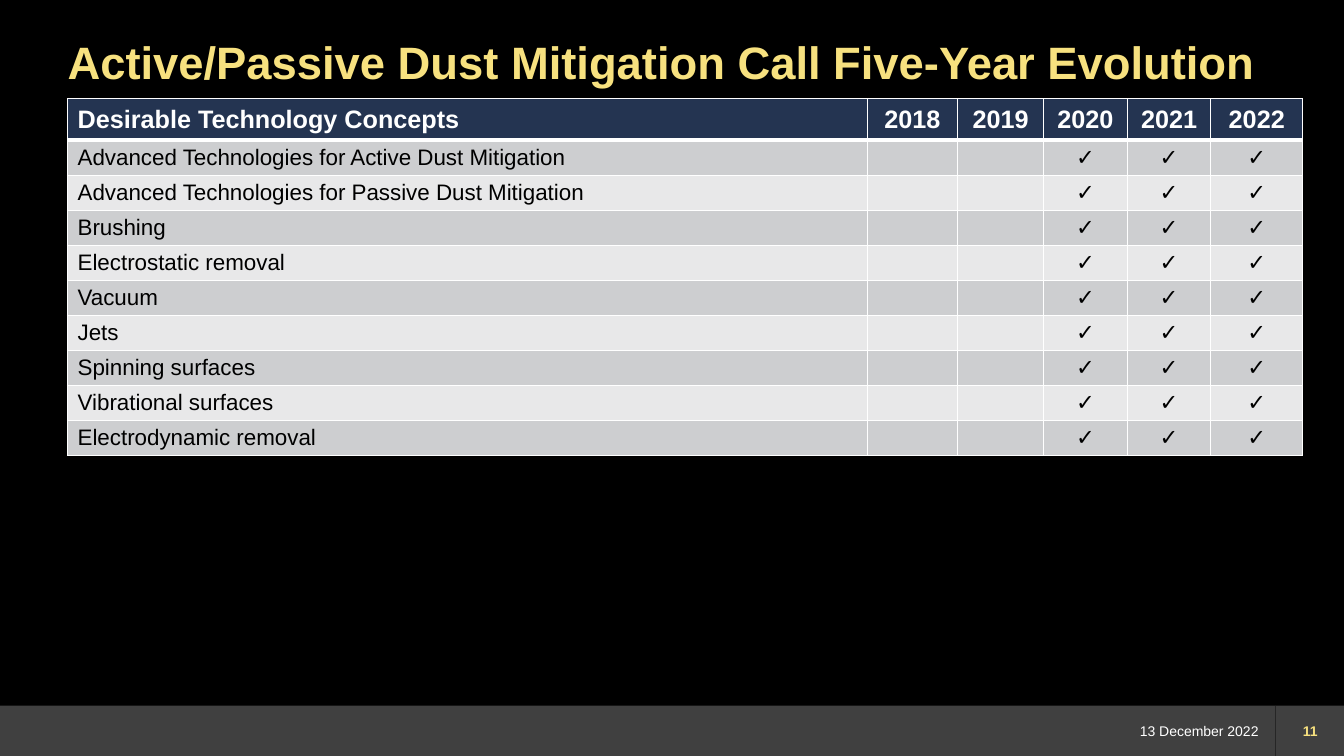
import pptx
import pptx.util
import pptx.dml.color
import pptx.enum.shapes
import pptx.enum.text
import lxml.etree
from pptx.oxml.ns import qn

Inches, Pt = pptx.util.Inches, pptx.util.Pt
ALIGN = pptx.enum.text.PP_ALIGN
ANCHOR = pptx.enum.text.MSO_ANCHOR

TITLE = "Active/Passive Dust Mitigation Call Five-Year Evolution"
DATE, PAGE = "13 December 2022", "11"
HEADER = ["Desirable Technology Concepts", "2018", "2019", "2020", "2021", "2022"]
CONCEPTS = [
    "Advanced Technologies for Active Dust Mitigation",
    "Advanced Technologies for Passive Dust Mitigation",
    "Brushing",
    "Electrostatic removal",
    "Vacuum",
    "Jets",
    "Spinning surfaces",
    "Vibrational surfaces",
    "Electrodynamic removal",
]
FIRST_YEAR = "2020"  # every concept is ticked from this year on
COL_WIDTHS = [7.93, 0.9, 0.85, 0.83, 0.83, 0.91]
HEADER_HEIGHT, BODY_HEIGHT = 0.41, 3.13
SLIDE_W, SLIDE_H, FOOTER_H = 13.33, 7.5, 0.5
FOOTER_TOP = SLIDE_H - FOOTER_H
LEFT, TABLE_TOP, DIVIDER_X = 0.67, 0.98, 12.65


class Theme:
    font = "Arial"
    background, footer, divider = "000000", "404040", "262626"
    accent, light, dark = "F7E17F", "FFFFFF", "000000"
    header, bands = "243451", ("CDCED0", "E8E8E9")
    title_size, header_size, body_size, footer_size = 32.4, 18, 16, 10
    rule, header_rule = 1, 3


def rgb(value):
    return pptx.dml.color.RGBColor.from_string(value)


def write(tf, text, size, color, bold=False, align=ALIGN.LEFT):
    p = tf.paragraphs[0]
    p.text = text
    p.alignment = align
    p.font.name, p.font.size, p.font.bold = Theme.font, Pt(size), bold
    p.font.color.rgb = rgb(color)
    return p


def set_border(cell, top, bottom):
    """Draw the four cell edges; the widths of top and bottom are in points."""
    props = cell._tc.get_or_add_tcPr()
    widths = {"a:lnL": Theme.rule, "a:lnR": Theme.rule, "a:lnT": top, "a:lnB": bottom}
    for i, (tag, width) in enumerate(widths.items()):
        ln = lxml.etree.Element(qn(tag), w=str(Pt(width)))
        fill = lxml.etree.SubElement(ln, qn("a:solidFill"))
        lxml.etree.SubElement(fill, qn("a:srgbClr"), val=Theme.light)
        props.insert(i, ln)


def add_title(slide):
    title = slide.shapes.title
    title.left, title.top, title.width, title.height = map(Inches, (LEFT, 0.4, 12, 0.83))
    tf = title.text_frame
    tf.margin_left = tf.margin_right = tf.margin_top = tf.margin_bottom = 0
    tf.vertical_anchor = ANCHOR.TOP
    tf.auto_size = pptx.enum.text.MSO_AUTO_SIZE.NONE
    tf.word_wrap = True
    write(tf, TITLE, Theme.title_size, Theme.accent, True).line_spacing = 0.9


def add_footer_text(slide, text, left, width, margin, color, bold, align):
    tf = slide.shapes.add_textbox(*map(Inches, (left, FOOTER_TOP, width, FOOTER_H))).text_frame
    tf.margin_left = tf.margin_right = Inches(margin)
    tf.margin_top = tf.margin_bottom = 0
    tf.vertical_anchor = ANCHOR.MIDDLE
    tf.word_wrap = True
    write(tf, text, Theme.footer_size, color, bold, align)


def add_footer(slide):
    bar = slide.shapes.add_shape(pptx.enum.shapes.MSO_SHAPE.RECTANGLE,
                                 *map(Inches, (0, FOOTER_TOP, SLIDE_W, FOOTER_H)))
    bar.shadow.inherit = False
    bar.fill.solid()
    bar.fill.fore_color.rgb = rgb(Theme.footer)
    bar.line.fill.background()
    divider = slide.shapes.add_connector(pptx.enum.shapes.MSO_CONNECTOR.STRAIGHT,
                                         *map(Inches, (DIVIDER_X, FOOTER_TOP, DIVIDER_X, SLIDE_H)))
    divider.line.color.rgb = rgb(Theme.divider)
    divider.line.width = Pt(Theme.rule)
    lxml.etree.SubElement(divider._element.spPr, qn("a:effectLst"))
    add_footer_text(slide, DATE, 11.08, 1.5, 0.1, Theme.light, False, ALIGN.RIGHT)
    add_footer_text(slide, PAGE, 12.73, 0.53, 0, Theme.accent, True, ALIGN.CENTER)


def add_concept_table(slide):
    ticks = ["✓" if year >= FIRST_YEAR else "" for year in HEADER[1:]]
    rows = [HEADER] + [[concept] + ticks for concept in CONCEPTS]
    table = slide.shapes.add_table(
        len(rows), len(HEADER), Inches(LEFT), Inches(TABLE_TOP),
        Inches(sum(COL_WIDTHS)), Inches(HEADER_HEIGHT + BODY_HEIGHT)).table
    for column, width in zip(table.columns, COL_WIDTHS):
        column.width = Inches(width)
    for r, row in enumerate(rows):
        is_header = r == 0
        table.rows[r].height = Inches(HEADER_HEIGHT if is_header else BODY_HEIGHT / len(CONCEPTS))
        for c, text in enumerate(row):
            cell = table.cell(r, c)
            cell.margin_top = cell.margin_bottom = Inches(0.02)
            cell.vertical_anchor = ANCHOR.MIDDLE
            cell.fill.solid()
            cell.fill.fore_color.rgb = rgb(Theme.header if is_header else Theme.bands[(r - 1) % 2])
            set_border(cell, Theme.header_rule if r == 1 else Theme.rule,
                       Theme.header_rule if is_header else Theme.rule)
            write(cell.text_frame, text,
                  Theme.header_size if is_header else Theme.body_size,
                  Theme.light if is_header else Theme.dark,
                  is_header, ALIGN.CENTER if c else ALIGN.LEFT)


def main():
    prs = pptx.Presentation()
    prs.slide_width, prs.slide_height = Inches(SLIDE_W), Inches(SLIDE_H)
    slide = prs.slides.add_slide(prs.slide_layouts.get_by_name("Title Only"))
    slide.background.fill.solid()
    slide.background.fill.fore_color.rgb = rgb(Theme.background)
    add_footer(slide)
    add_title(slide)
    add_concept_table(slide)
    prs.save("out.pptx")


if __name__ == "__main__":
    main()
